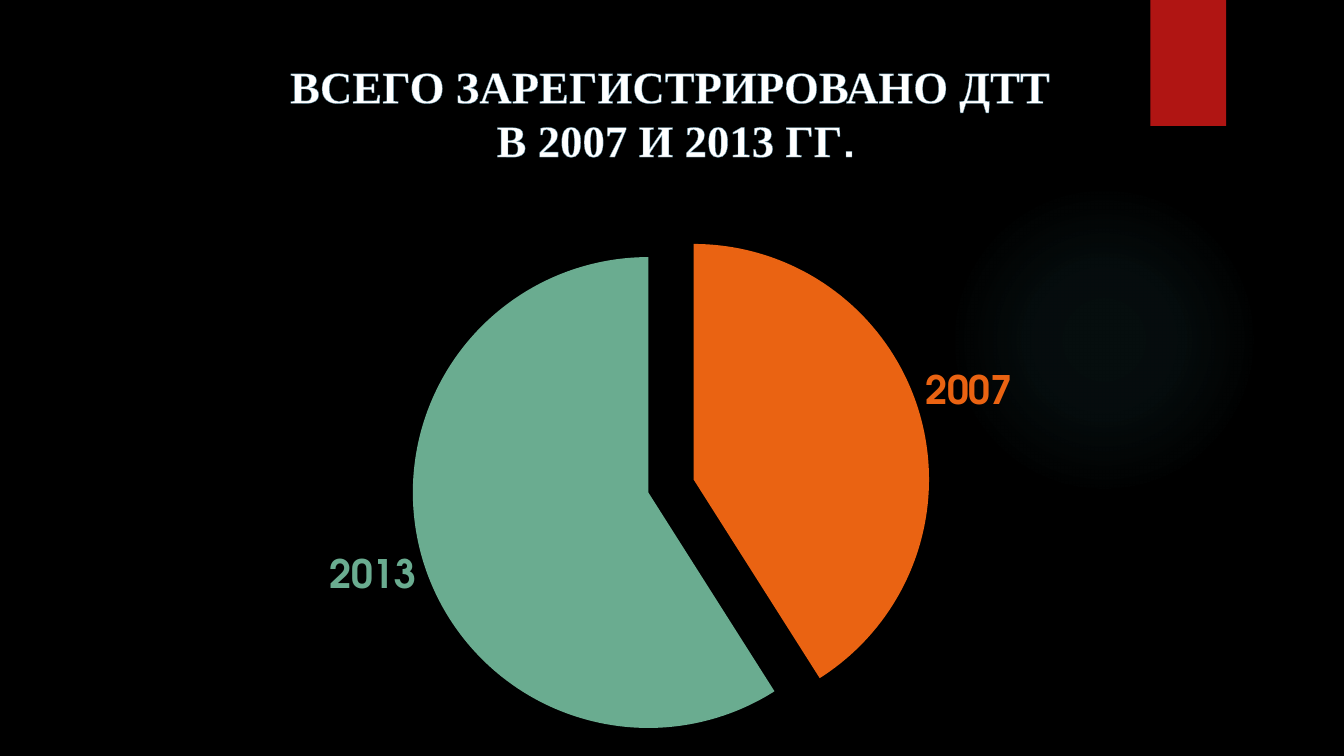
from lxml import etree
from pptx import Presentation
from pptx.chart.data import CategoryChartData
from pptx.dml.color import RGBColor
from pptx.enum.chart import XL_CHART_TYPE, XL_LABEL_POSITION
from pptx.enum.shapes import MSO_SHAPE
from pptx.enum.text import PP_ALIGN
from pptx.oxml import parse_xml
from pptx.oxml.ns import nsdecls, qn
from pptx.util import Inches, Pt

PIE = XL_CHART_TYPE.PIE
OUT = XL_LABEL_POSITION.OUTSIDE_END
RECT = MSO_SHAPE.RECTANGLE
OVAL = MSO_SHAPE.OVAL
MID = PP_ALIGN.CENTER
HUES = {"back": "000000", "text": "FFFFFF", "edge": "54849A", "glow": "50B9C1",
        "red": "B01513", "orange": "EA6312", "gold": "E6B729", "green": "6AAC90"}
SANS, SERIF = "TeX Gyre Adventor", "Times New Roman"


def rgb(name):
    return RGBColor.from_string(HUES[name])


class Deck:
    """Holds the style and the current slide; lengths are percent of its size."""

    def __init__(self):
        self.show = Presentation()
        self.show.slide_width, self.show.slide_height = Inches(13.33), Inches(7.5)
        self.page = self.show.slides.add_slide(self.show.slide_layouts[6])
        fill = self.page.background.fill
        fill.solid()
        fill.fore_color.rgb = rgb("back")

    def area(self, left, top, wide, high):
        w, h = self.show.slide_width / 100, self.show.slide_height / 100
        return round(left * w), round(top * h), round(wide * w), round(high * h)

    def shape(self, kind, box, hue):
        item = self.page.shapes.add_shape(kind, *self.area(*box))
        item.shadow.inherit = False
        item.line.fill.background()
        item.fill.solid()
        item.fill.fore_color.rgb = rgb(hue)
        return item

    def glow(self, box, hue, stops):
        item = self.shape(OVAL, box, hue)
        marks = "".join(
            f'<a:gs pos="{at * 1000}"><a:srgbClr val="{HUES[hue]}">'
            f'<a:alpha val="{alpha * 1000}"/></a:srgbClr></a:gs>' for at, alpha in stops)
        grad = parse_xml(
            f'<a:gradFill {nsdecls("a")}><a:gsLst>{marks}</a:gsLst><a:path path="circle">'
            '<a:fillToRect l="50000" t="50000" r="50000" b="50000"/></a:path></a:gradFill>')
        solid = item.fill._xPr.find(qn("a:solidFill"))
        solid.getparent().replace(solid, grad)

    def title(self, box, lines, size):
        frame = self.page.shapes.add_textbox(*self.area(*box)).text_frame
        frame.word_wrap = True
        frame.margin_top = Inches(0.1)
        for i, line in enumerate(lines):
            para = frame.paragraphs[0] if i == 0 else frame.add_paragraph()
            para.alignment = MID
            font = para.font
            font.name, font.size, font.bold = SERIF, Pt(size), True
            font.color.rgb = rgb("text")
            for words, face in line:
                run = para.add_run()
                run.text = words
                if face != SERIF:
                    run.font.name = face
                run._r.get_or_add_rPr().insert(0, parse_xml(
                    f'<a:ln {nsdecls("a")} w="{Pt(0.8)}"><a:solidFill>'
                    f'<a:srgbClr val="{HUES["edge"]}"/></a:solidFill></a:ln>'))

    def pie(self, box, rows, size, burst, inner):
        data = CategoryChartData()
        data.categories = [name for name, _, _ in rows]
        data.add_series("Series 1", [value for _, value, _ in rows])
        chart = self.page.shapes.add_chart(PIE, *self.area(*box), data).chart
        chart.has_legend = chart.has_title = False
        chart.font.name, chart.font.size = SANS, Pt(10)
        chart.font.color.rgb = rgb("text")
        plot = chart.plots[0]
        plot.vary_by_categories = True
        series = plot.series[0]
        tags = series.data_labels
        tags.position = OUT
        self.label(tags.font, size, "red")
        for i, (name, _, hue) in enumerate(rows):
            point = series.points[i]
            point.format.fill.solid()
            point.format.fill.fore_color.rgb = rgb(hue)
            point.format.line.fill.background()
            if name:
                self.label(point.data_label.font, size, hue)
                point.data_label.position = OUT
        root = series._element
        for tag, flag in (("c:showCatName", "1"), ("c:showVal", "0"), ("c:showPercent", "0")):
            for node in root.iter(qn(tag)):
                node.set("val", flag)
        gap = etree.Element(qn("c:explosion"), val=str(burst))
        root.find(qn("c:tx")).addnext(gap)
        spots = "".join(f'<c:{k} val="{v}"/>' for k, v in zip(
            ("layoutTarget", "xMode", "yMode", "x", "y", "w", "h"),
            ("inner", "edge", "edge", *inner)))
        field = chart._chartSpace.chart.plotArea
        for old in field.findall(qn("c:layout")):
            field.remove(old)
        field.insert(0, parse_xml(
            f'<c:layout {nsdecls("c")}><c:manualLayout>{spots}</c:manualLayout></c:layout>'))

    def label(self, font, size, hue):
        font.name, font.size, font.bold = SANS, Pt(size), True
        font.color.rgb = rgb(hue)


def main():
    deck = Deck()
    deck.glow((70.59, 24.4, 23.1, 41.07), "glow", [(0, 7), (36, 6), (69, 0)])
    deck.shape(RECT, (85.6, 0, 5.63, 16.67), "red")
    deck.title((20.25, 6.4, 59.26, 19.73), [
        [("ВСЕГО ЗАРЕГИСТРИРОВАНО ДТТ", SERIF)],
        [(" В 2007 И 2013 ГГ", SERIF), (".", SANS)]], 32)
    deck.pie((16.58, 27.87, 66.69, 72.13), [
        ("", None, "red"), ("2007", 41, "orange"),
        ("", None, "gold"), ("2013", 59, "green")], 28, 10, (0.21, 0.03, 0.58, 0.95))
    deck.show.save("out.pptx")


if __name__ == "__main__":
    main()
